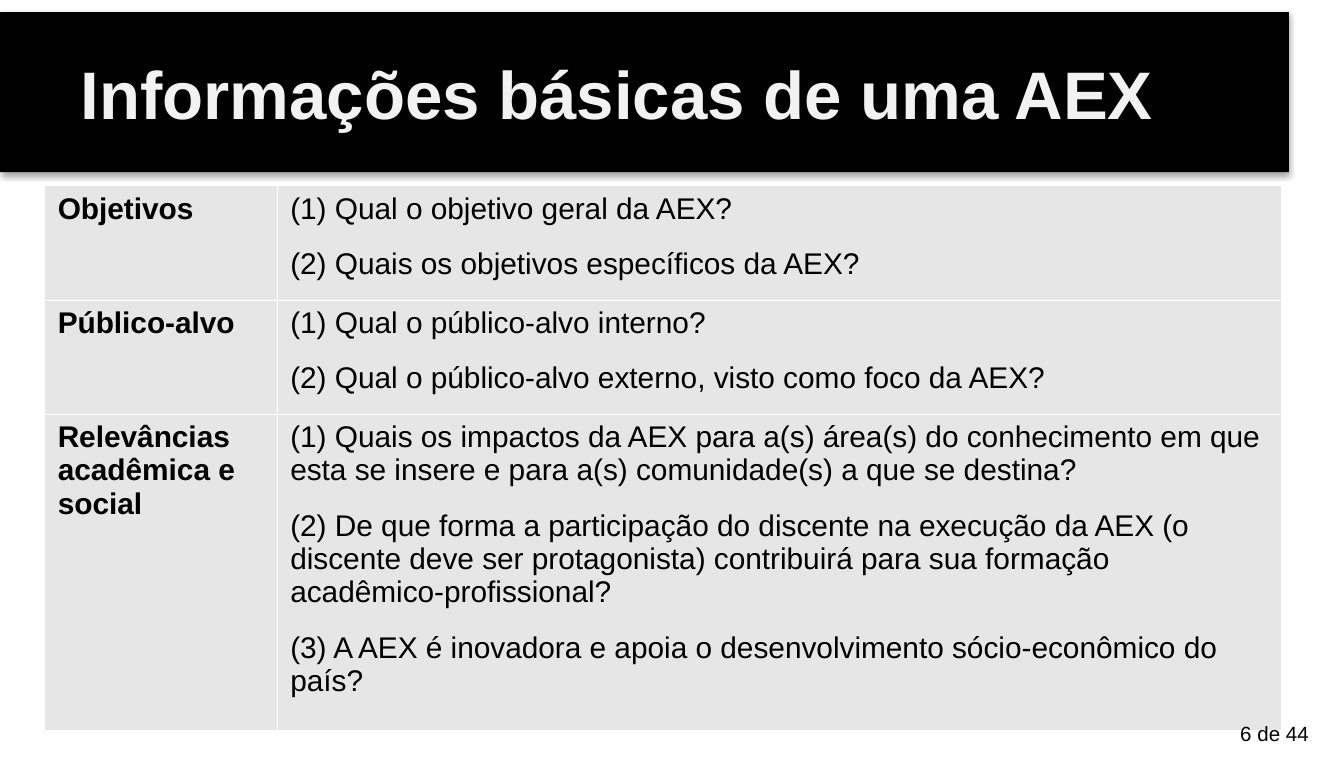
from lxml.etree import SubElement
from pptx import Presentation
from pptx.dml.color import RGBColor
from pptx.enum.shapes import MSO_SHAPE as Shape
from pptx.enum.text import MSO_ANCHOR as Anchor
from pptx.oxml import parse_xml
from pptx.oxml.ns import nsdecls, qn
from pptx.util import Inches, Pt

TITLE = "Informações básicas de uma AEX"
PAGE = "6 de 44"
TOPICS = [
    ("Objetivos", [
        "(1) Qual o objetivo geral da AEX?",
        "(2) Quais os objetivos específicos da AEX?",
    ]),
    ("Público-alvo", [
        "(1) Qual o público-alvo interno?",
        "(2) Qual o público-alvo externo, visto como foco da AEX?",
    ]),
    ("Relevâncias acadêmica e social", [
        "(1) Quais os impactos da AEX para a(s) área(s) do conhecimento em que "
        "esta se insere e para a(s) comunidade(s) a que se destina?",
        "(2) De que forma a participação do discente na execução da AEX (o "
        "discente deve ser protagonista) contribuirá para sua formação "
        "acadêmico-profissional?",
        "(3) A AEX é inovadora e apoia o desenvolvimento sócio-econômico do país?",
    ]),
]
COLUMN_WIDTHS = (1.73, 7.47)
ROW_HEIGHTS = (0.85, 0.85, 2.35)

THEME = {
    "font": "Arial",
    "banner": "000000", "title": "F2F2F2", "text": "000000",
    "cell": "E6E6E6", "border": "FFFFFF",
    "title_size": 36, "body_size": 16, "page_size": 11,
    "paragraph_gap": 11.9, "border_width": 0.06,
}


def paint(target, color):
    target.fill.solid()
    target.fill.fore_color.rgb = RGBColor.from_string(THEME[color])


def write(text_frame, lines, size, color="text", bold=False, gap=None):
    text_frame.text = "\n".join(lines)
    text_frame.word_wrap = True
    for paragraph in text_frame.paragraphs:
        if gap is not None:
            paragraph.space_after = Pt(gap)
        for run in paragraph.runs:
            font = run.font
            font.name, font.size, font.bold = THEME["font"], Pt(THEME[size]), bold
            font.color.rgb = RGBColor.from_string(THEME[color])


def add_borders(cell):
    properties = cell._tc.get_or_add_tcPr()
    for index, side in enumerate("LRTB"):
        properties.insert(index, parse_xml(
            f'<a:ln{side} {nsdecls("a")} w="{Pt(THEME["border_width"])}">'
            f'<a:solidFill><a:srgbClr val="{THEME["border"]}"/></a:solidFill>'
            f'</a:ln{side}>'))


def add_shadow(shape):
    shape.shadow.inherit = False
    effects = shape._element.spPr.find(qn("a:effectLst"))
    shadow = SubElement(effects, qn("a:outerShdw"), blurRad=str(Pt(3.1)),
                        dist=str(Pt(1.8)), dir="5400000", rotWithShape="0")
    color = SubElement(shadow, qn("a:srgbClr"), val="000000")
    SubElement(color, qn("a:alpha"), val="35000")


def add_banner(slide):
    banner = slide.shapes.add_shape(
        Shape.RECTANGLE, Inches(0), Inches(0.09), Inches(9.59), Inches(1.19))
    paint(banner, "banner")
    banner.line.fill.background()
    add_shadow(banner)
    frame = banner.text_frame
    frame.vertical_anchor = Anchor.MIDDLE
    write(frame, [TITLE], "title_size", "title", bold=True)
    properties = frame.paragraphs[0]._p.get_or_add_pPr()
    properties.set("marL", str(Inches(0.5)))
    properties.set("algn", "l")


def add_topics(slide):
    table = slide.shapes.add_table(
        len(TOPICS), len(COLUMN_WIDTHS), Inches(0.33), Inches(1.38),
        Inches(sum(COLUMN_WIDTHS)), Inches(sum(ROW_HEIGHTS))).table
    table.first_row = table.horz_banding = False
    for column, width in zip(table.columns, COLUMN_WIDTHS):
        column.width = Inches(width)
    for row, height, (topic, questions) in zip(table.rows, ROW_HEIGHTS, TOPICS):
        row.height = Inches(height)
        topic_cell, question_cell = row.cells
        write(topic_cell.text_frame, [topic], "body_size", bold=True)
        write(question_cell.text_frame, questions, "body_size",
              gap=THEME["paragraph_gap"])
        for cell in row.cells:
            paint(cell, "cell")
            add_borders(cell)


def add_page_number(slide):
    box = slide.shapes.add_textbox(
        Inches(9.13), Inches(5.31), Inches(0.86), Inches(0.34))
    write(box.text_frame, [PAGE], "page_size")


def main():
    presentation = Presentation()
    presentation.slide_width, presentation.slide_height = Inches(10), Inches(5.63)
    slide = presentation.slides.add_slide(presentation.slide_layouts[6])
    add_banner(slide)
    add_topics(slide)
    add_page_number(slide)
    presentation.save("out.pptx")


if __name__ == "__main__":
    main()
